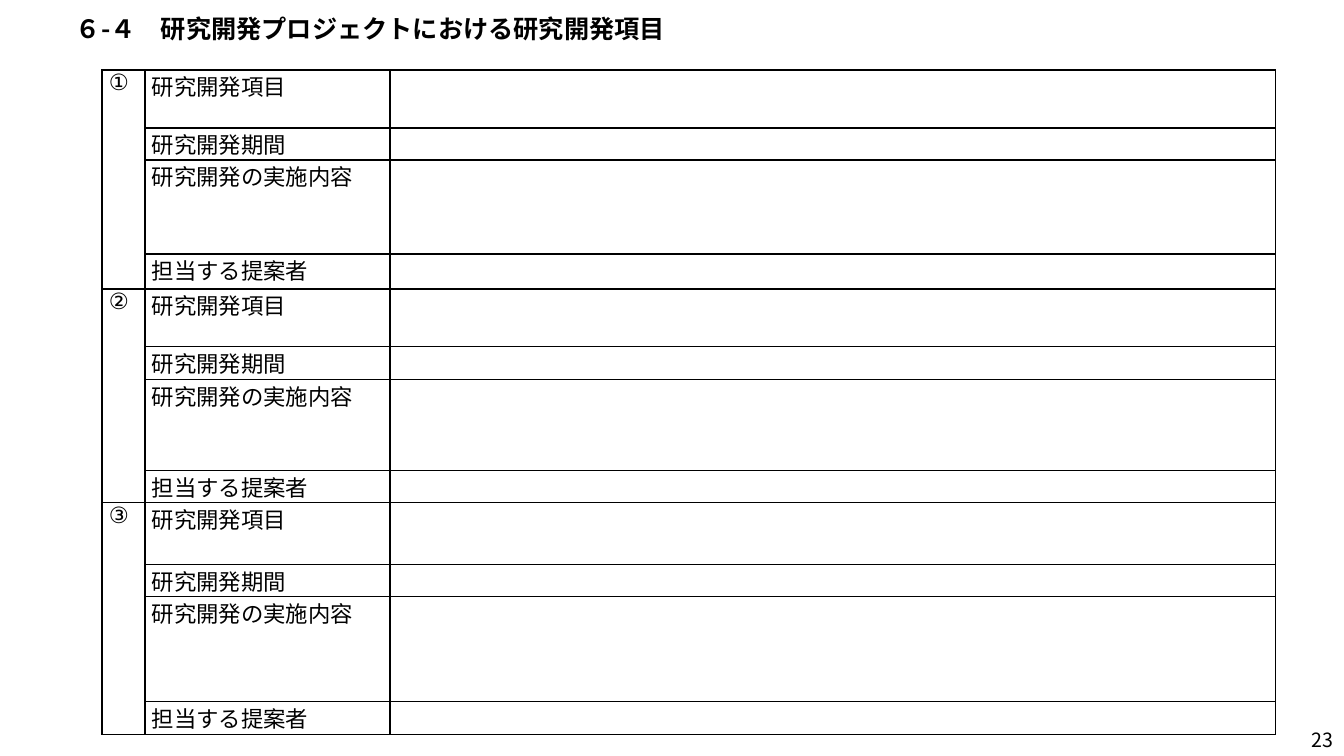
"""Build the slide listing three research and development items in a table."""
from lxml.etree import SubElement
from pptx import Presentation
from pptx.dml.color import RGBColor
from pptx.enum.text import MSO_ANCHOR as Anchor, PP_ALIGN as Align
from pptx.oxml.ns import qn
from pptx.util import Pt

PX = 914400 / 100.8
COLORS = {"ink": "000000", "paper": "FFFFFF"}
JAPANESE_FONT = "Noto Sans CJK JP"
COLUMNS = [43, 245, 886]
ROWS = [58, 32, 94, 35, 58, 33, 91, 32, 62, 32, 105, 33]
NUMBERS = ["①", "②", "③"]
LABELS = ["研究開発項目", "研究開発期間", "研究開発の実施内容", "担当する提案者"]
TEXTS = [
    ("６-４　研究開発プロジェクトにおける研究開発項目", (66, 14, 1159, 33),
     Align.LEFT, (10, 5), 0.9, {"size": Pt(18), "bold": True}),
    ("23", (1257, 725, 86, 29),
     Align.RIGHT, (10, 5), 1.0, {"size": Pt(14), "bold": False}),
]


def px(length):
    return round(length * PX)


def add_run(paragraph, text, latin_font, formats):
    run = paragraph.add_run()
    run.text = text
    run.font.name = latin_font
    run.font.color.rgb = RGBColor.from_string(COLORS["ink"])
    for name, value in formats.items():
        setattr(run.font, name, value)
    SubElement(run.font._element, qn("a:ea"), typeface=JAPANESE_FONT)


presentation = Presentation()
presentation.slide_width = px(1344)
presentation.slide_height = px(756)
slide = presentation.slides.add_slide(presentation.slide_layouts[6])

for text, box, alignment, (side, edge), spacing, formats in TEXTS:
    frame = slide.shapes.add_textbox(*map(px, box)).text_frame
    frame_formats = {
        "word_wrap": True, "vertical_anchor": Anchor.MIDDLE,
        "margin_left": px(side), "margin_right": px(side),
        "margin_top": px(edge), "margin_bottom": px(edge),
    }
    for name, value in frame_formats.items():
        setattr(frame, name, value)
    paragraph = frame.paragraphs[0]
    paragraph.alignment = alignment
    paragraph.line_spacing = spacing
    add_run(paragraph, text, JAPANESE_FONT, formats)

table = slide.shapes.add_table(
    len(ROWS), len(COLUMNS), px(102), px(70), px(sum(COLUMNS)), px(sum(ROWS))
).table
table.first_row = False
table.horz_banding = False
for column, width in zip(table.columns, COLUMNS):
    column.width = px(width)

cell_formats = {
    "margin_left": px(7), "margin_right": px(7),
    "margin_top": 0, "margin_bottom": 0, "vertical_anchor": Anchor.TOP,
}
for row_index, height in enumerate(ROWS):
    table.rows[row_index].height = px(height)
    item, line = divmod(row_index, len(LABELS))
    number = NUMBERS[item] if line == 0 else ""
    for cell, text in zip(table.rows[row_index].cells, [number, LABELS[line], ""]):
        for name, value in cell_formats.items():
            setattr(cell, name, value)
        properties = cell._tc.get_or_add_tcPr()
        for side in ("a:lnL", "a:lnR", "a:lnT", "a:lnB"):
            border = SubElement(properties, qn(side), w=str(Pt(1)))
            fill = SubElement(border, qn("a:solidFill"))
            SubElement(fill, qn("a:srgbClr"), val=COLORS["ink"])
        cell.fill.solid()
        cell.fill.fore_color.rgb = RGBColor.from_string(COLORS["paper"])
        paragraph = cell.text_frame.paragraphs[0]
        if text:
            paragraph.alignment = Align.JUSTIFY
            add_run(paragraph, text, "Arial", {"size": Pt(16), "bold": False})
        else:
            SubElement(paragraph._p, qn("a:endParaRPr"), sz="1600")

for first in range(0, len(ROWS), len(LABELS)):
    table.cell(first, 0).merge(table.cell(first + len(LABELS) - 1, 0))

presentation.save("out.pptx")
